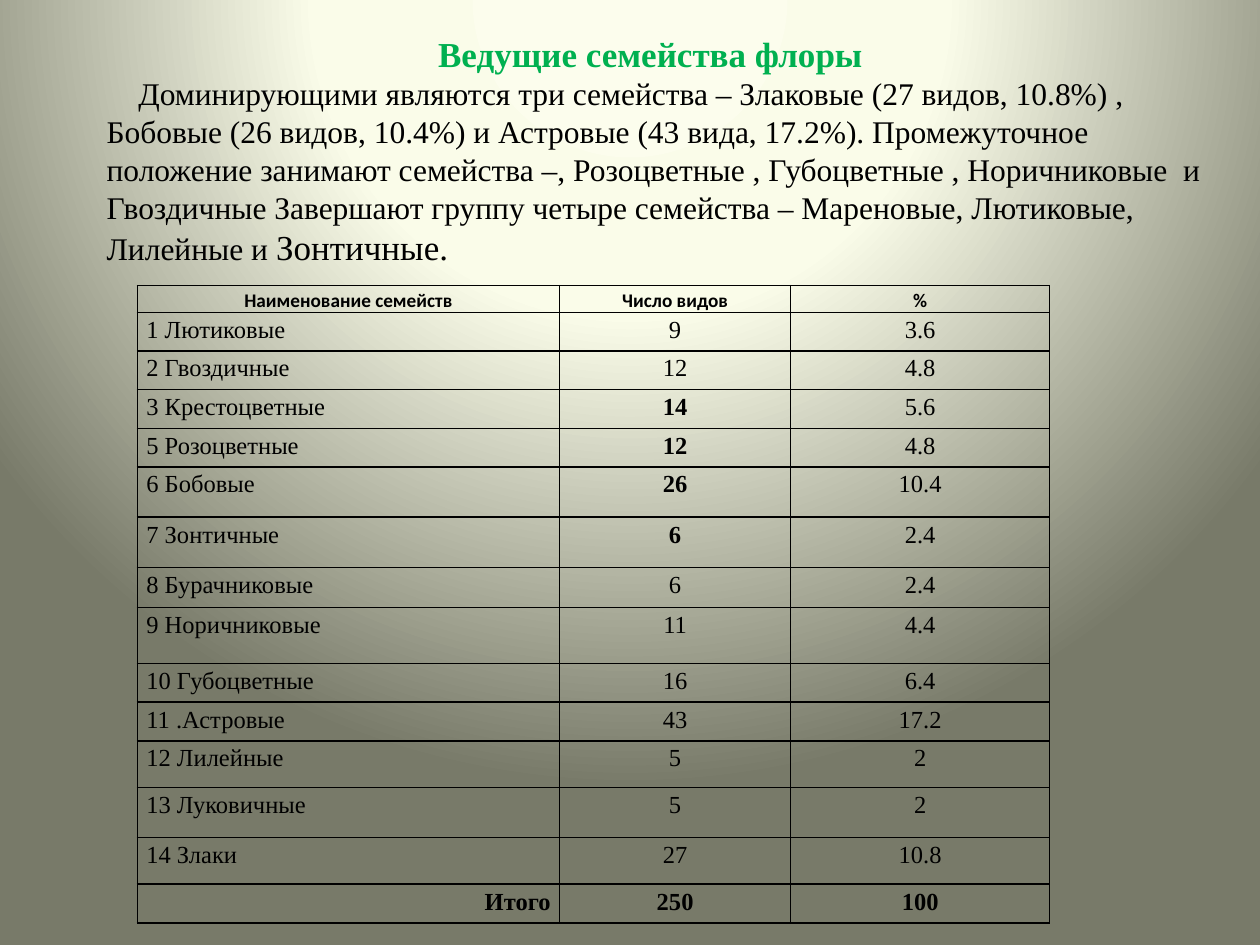
from dataclasses import dataclass

from pptx import Presentation
from pptx.dml.color import RGBColor
from pptx.enum.text import MSO_AUTO_SIZE as AutoSize, PP_ALIGN as Align
from pptx.oxml import parse_xml
from pptx.oxml.ns import nsdecls
from pptx.util import Cm, Pt


@dataclass(frozen=True)
class Theme:
    ink: str = "000000"
    accent: str = "00B050"
    glow: tuple = ((0, "FCFDED"), (40, "FAFCE9"), (100, "787A69"))
    serif: str = "Times New Roman"
    sans: str = "Calibri"
    title_size: int = 20
    body_size: int = 18
    cell_size: int = 14
    header_size: int = 11
    border_width: int = 1


class SlideBuilder:
    def __init__(self, slide, theme):
        self.slide = slide
        self.theme = theme

    def background(self):
        """Circular gradient centred above the top edge."""
        stops = "".join(
            f'<a:gs pos="{pos * 1000}"><a:srgbClr val="{color}"/></a:gs>'
            for pos, color in self.theme.glow)
        self.slide.element.cSld.insert(0, parse_xml(
            f'<p:bg {nsdecls("p", "a")}><p:bgPr><a:gradFill rotWithShape="1">'
            f'<a:gsLst>{stops}</a:gsLst><a:path path="circle">'
            '<a:fillToRect l="50000" t="-80000" r="50000" b="180000"/></a:path>'
            '</a:gradFill><a:effectLst/></p:bgPr></p:bg>'))

    def run(self, paragraph, text, size, color=None, bold=False, font=None):
        run = paragraph.add_run()
        run.text = text
        run.font.size = Pt(size)
        run.font.bold = bold
        run.font.name = font or self.theme.serif
        run.font.color.rgb = RGBColor.from_string(color or self.theme.ink)

    def intro(self, left, top, width, height, title, body, closing):
        theme = self.theme
        frame = self.slide.shapes.add_textbox(left, top, width, height).text_frame
        frame.word_wrap = True
        frame.auto_size = AutoSize.SHAPE_TO_FIT_TEXT
        heading = frame.paragraphs[0]
        heading.alignment = Align.CENTER
        self.run(heading, title, theme.title_size, theme.accent, bold=True)
        summary = frame.add_paragraph()
        summary._p.get_or_add_pPr().set("indent", str(Cm(0.64)))
        self.run(summary, body, theme.body_size)
        self.run(summary, closing, theme.title_size)

    def borders(self, cell):
        properties = cell._tc.get_or_add_tcPr()
        for position, side in enumerate(("lnL", "lnR", "lnT", "lnB")):
            properties.insert(position, parse_xml(
                f'<a:{side} {nsdecls("a")} w="{Pt(self.theme.border_width)}">'
                f'<a:solidFill><a:srgbClr val="{self.theme.ink}"/></a:solidFill>'
                f'</a:{side}>'))

    def cell(self, cell, text, align, bold, is_header):
        theme = self.theme
        cell.margin_left = cell.margin_right = Cm(0.18)
        cell.margin_top = cell.margin_bottom = 0
        cell.fill.background()
        self.borders(cell)
        paragraph = cell.text_frame.paragraphs[0]
        paragraph.alignment = align
        paragraph.line_spacing = 1.15
        if is_header:
            self.run(paragraph, text, theme.header_size, bold=bold, font=theme.sans)
        else:
            paragraph.space_after = Pt(10)
            self.run(paragraph, text, theme.cell_size, bold=bold)

    def table(self, left, top, widths, heights, rows, bold_cells, name_aligns):
        table = self.slide.shapes.add_table(
            len(rows), len(widths), left, top, sum(widths), sum(heights)).table
        table.first_row = table.horz_banding = False
        for column, width in zip(table.columns, widths):
            column.width = width
        for r, (values, height) in enumerate(zip(rows, heights)):
            table.rows[r].height = height
            for c, value in enumerate(values):
                align = Align.CENTER if c else name_aligns[r]
                self.cell(table.cell(r, c), value, align, (r, c) in bold_cells, r == 0)


FAMILIES = [
    ("Наименование семейств", "Число видов", "%"),
    ("1 Лютиковые", "9", "3.6"),
    ("2 Гвоздичные", "12", "4.8"),
    ("3 Крестоцветные", "14", "5.6"),
    ("5 Розоцветные", "12", "4.8"),
    ("6 Бобовые", "26", "10.4"),
    ("7 Зонтичные", "6", "2.4"),
    ("8 Бурачниковые", "6", "2.4"),
    ("9 Норичниковые", "11", "4.4"),
    ("10 Губоцветные", "16", "6.4"),
    ("11 .Астровые", "43", "17.2"),
    ("12 Лилейные", "5", "2"),
    ("13 Луковичные", "5", "2"),
    ("14 Злаки", "27", "10.8"),
    ("Итого", "250", "100"),
]
ROW_HEIGHTS = [0.53, *[0.78] * 4, 1.01, 1.01, 0.81, 1.13, 0.78, 0.78,
               0.94, 1.01, 0.94, 0.78]


def main():
    presentation = Presentation()
    presentation.slide_width, presentation.slide_height = Cm(25.4), Cm(19.05)
    slide = presentation.slides.add_slide(presentation.slide_layouts[6])
    builder = SlideBuilder(slide, Theme())
    builder.background()
    builder.intro(
        Cm(1.9), Cm(0.53), Cm(22.6), Cm(5.05),
        "Ведущие семейства флоры ",
        "Доминирующими являются три семейства – Злаковые (27 видов, 10.8%) , "
        "Бобовые (26 видов, 10.4%) и Астровые (43 вида, 17.2%). Промежуточное "
        "положение занимают семейства –, Розоцветные , Губоцветные , "
        "Норичниковые  и Гвоздичные Завершают группу четыре семейства – "
        "Мареновые, Лютиковые, Лилейные и ",
        "Зонтичные.")
    total_row = len(FAMILIES) - 1
    bold_cells = {(r, c) for r in (0, total_row) for c in range(3)}
    bold_cells |= {(r, 1) for r in range(3, 7)}
    builder.table(
        Cm(2.77), Cm(5.76), [Cm(w) for w in (8.51, 4.66, 5.22)],
        [Cm(h) for h in ROW_HEIGHTS], FAMILIES, bold_cells,
        [Align.CENTER, *[Align.JUSTIFY] * 6, *[Align.LEFT] * 7, Align.RIGHT])
    presentation.save("out.pptx")


if __name__ == "__main__":
    main()
